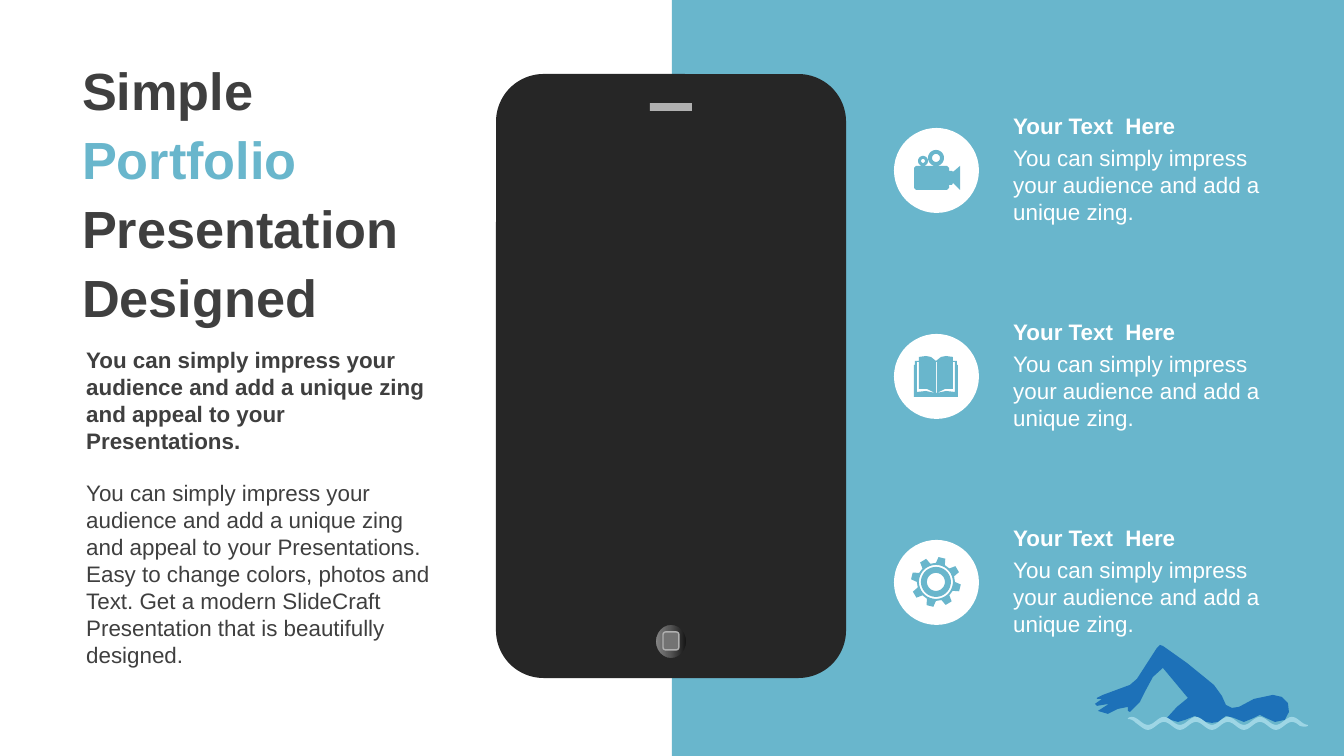
from copy import deepcopy
from math import cos, pi, radians, sin

from pptx import Presentation
from pptx.dml.color import RGBColor
from pptx.enum.shapes import MSO_SHAPE
from pptx.enum.text import MSO_ANCHOR
from pptx.oxml.ns import qn
from pptx.util import Emu, Pt

SCALE = 914400 / 134.4
TEAL, DARK, WHITE = "69B6CC", "3F3F3F", "FFFFFF"
BLACK, SILVER = "262626", "B0B0B0"
CLAIM = "You can simply impress your audience and add a unique zing"
APPEAL = f"{CLAIM} and appeal to your Presentations."
OFFER = ("Easy to change colors, photos and Text. Get a modern SlideCraft "
         "Presentation that is beautifully designed.")
SWIMMER = [
    (76, 75), (72, 73), (82, 62), (93, 53), (68, 23), (58, 32), (51, 45),
    (45, 57), (35, 67), (33, 66), (33, 62), (23, 64), (13, 69), (3, 66),
    (14, 59), (2, 61), (0, 59), (7, 54), (2, 54), (2, 53), (8, 50), (35, 40),
    (42, 34), (62, 3), (65, 0), (68, 1), (92, 18), (108, 31), (119, 40),
    (127, 51), (131, 60), (137, 63), (144, 62), (159, 54), (178, 50),
    (187, 52), (193, 58), (194, 67), (190, 75), (180, 77), (171, 73),
    (165, 70), (159, 73), (149, 77), (139, 73), (131, 71), (123, 77),
    (117, 78), (111, 77), (100, 71), (90, 75), (83, 77)]


def px(length):
    """Turn px into EMU."""
    return Emu(round(length * SCALE))


def rgb(color):
    """Turn a hex string into a colour."""
    return RGBColor.from_string(color)


def paint(shape, color):
    """Give a shape a plain fill, no line and no shadow."""
    shape.shadow.inherit = False
    shape.fill.solid()
    shape.fill.fore_color.rgb = rgb(color)
    shape.line.fill.background()
    return shape


def add_preset(slide, preset, x, y, w, h, color):
    """Place a filled preset shape."""
    return paint(slide.shapes.add_shape(preset, px(x), px(y), px(w), px(h)), color)


def add_outline(slide, x, y, contours, color):
    """Draw closed contours, relative to x and y, as one filled shape."""
    placed = [[(px(x + dx), px(y + dy)) for dx, dy in contour] for contour in contours]
    builder = slide.shapes.build_freeform(*placed[0][0], scale=1.0)
    builder.add_line_segments(placed[0][1:], close=True)
    for contour in placed[1:]:
        builder.move_to(*contour[0])
        builder.add_line_segments(contour[1:], close=True)
    return paint(builder.convert_to_shape(), color)


def add_text(slide, x, y, w, h, paragraphs, size=12, bold=False, color=DARK, spacing=None):
    """Place wrapped text given as paragraphs of (text, colour) runs or strings."""
    frame = slide.shapes.add_textbox(px(x), px(y), px(w), px(h)).text_frame
    frame.word_wrap = True
    for index, content in enumerate(paragraphs):
        paragraph = frame.paragraphs[0] if index == 0 else frame.add_paragraph()
        if spacing:
            paragraph.line_spacing = spacing
        font = paragraph.font
        font.name, font.size, font.bold = "Arial", Pt(size), bold
        font.color.rgb = rgb(color)
        if isinstance(content, str):
            paragraph.add_run().text = content
            continue
        for words, run_color in content:
            run = paragraph.add_run()
            run.text = words
            run.font.color.rgb = rgb(run_color)
    return frame


def polar(cx, cy, radius, degrees):
    """Find a point on a circle."""
    return cx + radius * cos(radians(degrees)), cy + radius * sin(radians(degrees))


def ring(cx, cy, radius):
    """List the points of a circle."""
    return [polar(cx, cy, radius, angle) for angle in range(0, 360, 10)]


def camera():
    """Outline a film camera within its badge."""
    body = [(22, 38), (53, 38), (55, 40), (55, 43), (58, 43), (59, 44), (66, 38),
            (66, 62), (59, 55), (58, 57), (55, 57), (55, 60), (53, 62), (22, 62),
            (20, 60), (20, 40)]
    return [body, ring(42, 30, 8), ring(42, 30, 4), ring(29, 33, 5), ring(29, 33, 2)]


def book():
    """Outline an open book within its badge."""
    def mirror(points):
        return [(84 - x, y) for x, y in reversed(points)]

    cover = [(20, 63), (20, 31), (21, 31), (21, 27), (25, 27), (25, 23), (32, 22),
             (37, 23), (42, 27)]
    page_gap = [(23, 28), (25, 28), (25, 55), (33, 55), (41, 59), (32, 57), (23, 58)]
    spine = [(42, 28), (43, 28), (43, 59), (42, 59)]
    return [cover + mirror(cover), page_gap, mirror(page_gap), spine]


def gear():
    """Outline an eight-toothed gear within its badge."""
    corners = [(19, -14), (25, -8), (25, 8), (19, 14)]
    teeth = [polar(42, 42, radius, 45 * tooth - 76 + offset)
             for tooth in range(8) for radius, offset in corners]
    return [teeth] + [ring(42, 42, radius) for radius in (17, 15, 9)]


def add_message(slide, x, y, w):
    """Write the title and the two texts below it."""
    title = [("Simple ", DARK), ("Portfolio ", TEAL), ("Presentation Designed", DARK)]
    frame = add_text(slide, x, y, w, 280, [title], 28, True, spacing=1.1)
    frame.vertical_anchor = MSO_ANCHOR.MIDDLE
    add_text(slide, x + 4, y + 290, w - 4, 122, [APPEAL], bold=True)
    add_text(slide, x + 4, y + 423, w, 203, [APPEAL, OFFER])


def add_tablet(slide, x, y, w, h):
    """Draw a tablet with a speaker and a home button."""
    case = add_preset(slide, MSO_SHAPE.ROUNDED_RECTANGLE, x, y, w, h, BLACK)
    case.adjustments[0] = 0.136
    middle = x + w / 2
    add_preset(slide, MSO_SHAPE.RECTANGLE, middle - 21, y + 29, 42, 8, SILVER)
    button = add_preset(slide, MSO_SHAPE.OVAL, middle - 17, y + h - 55, 34, 37, BLACK)
    button.line.color.rgb = rgb(BLACK)
    button.line.width = Pt(2)
    button.fill.gradient()
    button.fill.gradient_angle = 180
    stops = button._element.spPr.find(qn("a:gradFill")).find(qn("a:gsLst"))
    for _ in range(2):
        stops.append(deepcopy(stops[0]))
    shades = [(0, "0F0F0F"), (0.56, "595959"), (0.91, "7F7F7F"), (1, "BFBFBF")]
    for stop, (position, shade) in zip(button.fill.gradient_stops, shades):
        stop.position = position
        stop.color.rgb = rgb(shade)
    key = add_preset(slide, MSO_SHAPE.ROUNDED_RECTANGLE, middle - 8, y + h - 46, 16, 18, "737373")
    key.line.color.rgb = rgb(SILVER)
    key.line.width = Pt(0.75)


def add_feature(slide, x, y, icon):
    """Place a round badge with its icon, heading and text."""
    add_preset(slide, MSO_SHAPE.OVAL, x, y + 22, 85, 85, WHITE)
    add_outline(slide, x, y + 22, icon, TEAL)
    add_text(slide, x + 106, y + 32, 282, 95, [f"{CLAIM}."], color=WHITE)
    add_text(slide, x + 106, y, 282, 40, ["Your Text  Here"], bold=True, color=WHITE)


def add_swimmer(slide, x, y):
    """Draw a swimmer above a rippling wave."""
    add_outline(slide, x, y, [SWIMMER], "1D71B8")
    crest = [(dx, 76 - 4 * cos(2 * pi * (dx - 69) / 32)) for dx in range(33, 214, 2)]
    trough = [(dx, dy + min(5, (dx - 31) / 2, (215 - dx) / 2)) for dx, dy in crest]
    add_outline(slide, x, y, [crest + trough[::-1]], "9ED6E5")


def main():
    """Build and save the slide."""
    deck = Presentation()
    deck.slide_width, deck.slide_height = px(1344), px(756)
    slide = deck.slides.add_slide(deck.slide_layouts[6])
    add_preset(slide, MSO_SHAPE.RECTANGLE, 672, 0, 672, 756, TEAL)
    add_tablet(slide, 496, 74, 350, 604)
    add_message(slide, 69, 50, 380)
    for row, icon in enumerate((camera(), book(), gear())):
        add_feature(slide, 894, 106 + 206 * row, icon)
    add_swimmer(slide, 1095, 645)
    deck.save("out.pptx")


if __name__ == "__main__":
    main()
